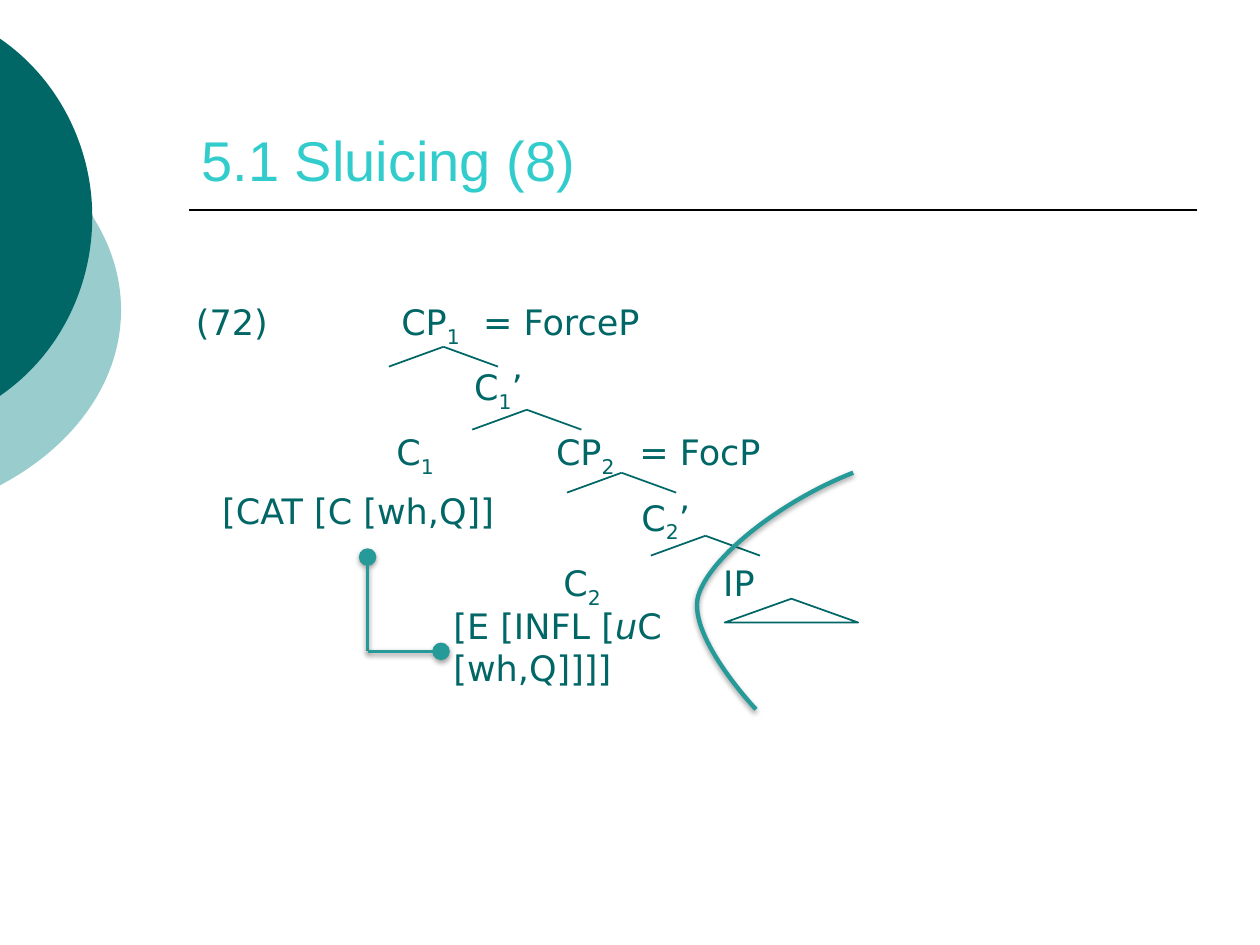
from pptx import Presentation
from pptx.dml.color import RGBColor
from pptx.enum.shapes import MSO_CONNECTOR as Connector, MSO_SHAPE as Preset
from pptx.enum.text import MSO_ANCHOR as Anchor, MSO_AUTO_SIZE as AutoSize, PP_ALIGN as Align
from pptx.oxml.ns import qn
from pptx.util import Cm, Pt
from lxml.etree import SubElement

DARK_TEAL = RGBColor(0x00, 0x66, 0x66)
PALE_TEAL = RGBColor(0x99, 0xCC, 0xCC)
MARK_TEAL = RGBColor(0x26, 0x99, 0x99)
TITLE_TEAL = RGBColor(0x33, 0xCC, 0xCC)
BLACK = RGBColor(0x00, 0x00, 0x00)

SUB, ITALIC = "sub", "italic"

# Each tree row holds its nodes: left edge in cm, text, subscript, text after it.
TREE_ROWS = [
    [(3.7, "(72)", "", ""), (7.84, "CP", "1", ""), (9.49, "= ForceP", "", "")],
    [(9.31, "C", "1", "’")],
    [(7.74, "C", "1", ""), (10.96, "CP", "2", ""), (12.64, "= FocP", "", "")],
    [(12.68, "C", "2", "’")],
    [(11.11, "C", "2", ""), (14.33, "IP", "", "")],
]
ROW_TOP, ROW_PITCH = 5.93, 1.315
NODE_WIDTH, NODE_HEIGHT = 4, 1.11

BRANCH_X = [8.94, 10.62, 12.53, 14.22]
BRANCH_TOP, BRANCH_PITCH = 6.99, 1.27
BRANCH_HALF, BRANCH_DROP = 1.1, 0.4


class SlideWriter:
    def __init__(self, page, font="DejaVu Sans", size=20, color=DARK_TEAL):
        self.page, self.font, self.size, self.color = page, font, size, color

    def title(self, text, *place):
        box = self.page.shapes.title
        box.left, box.top, box.width, box.height = map(Cm, place)
        box.text_frame.vertical_anchor = Anchor.BOTTOM
        box.text_frame.auto_size = AutoSize.NONE
        para = box.text_frame.paragraphs[0]
        para.alignment = Align.LEFT
        span = para.add_run()
        span.text = text
        span.font.name, span.font.size = "Arial", Pt(32)
        span.font.color.rgb = TITLE_TEAL

    def label(self, spans, *place):
        """Add a text box whose spans are pairs of text and style."""
        box = self.page.shapes.add_textbox(*map(Cm, place))
        box.text_frame.word_wrap = True
        para = box.text_frame.paragraphs[0]
        for text, style in spans:
            span = para.add_run()
            span.text = text
            span.font.name = self.font
            span.font.size = Pt(self.size)
            span.font.color.rgb = self.color
            if style == ITALIC:
                span.font.italic = True
            elif style == SUB:
                span._r.get_or_add_rPr().set("baseline", "-25000")

    def node(self, left, top, text, index, after):
        spans = [(text, None), (index, SUB), (after, None)]
        self.label([span for span in spans if span[0]],
                   left, top, NODE_WIDTH, NODE_HEIGHT)

    def effects(self, item, shadow):
        """Replace the theme shadow with a soft one, or with none."""
        effects = SubElement(item._element.spPr, qn("a:effectLst"))
        if shadow:
            outer = SubElement(effects, qn("a:outerShdw"), blurRad=str(Pt(3.1)),
                               dist=str(Pt(1.6)), dir="5400000", rotWithShape="0")
            tint = SubElement(outer, qn("a:srgbClr"), val=str(BLACK))
            SubElement(tint, qn("a:alpha"), val="38000")

    def line(self, start, end, color=DARK_TEAL, width=1, oval=None, shadow=False):
        """Draw a line; oval may be headEnd or tailEnd."""
        line = self.page.shapes.add_connector(Connector.STRAIGHT, *map(Cm, start + end))
        line.line.color.rgb = color
        line.line.width = Pt(width)
        if oval:
            SubElement(line.line._get_or_add_ln(), qn("a:" + oval),
                       type="oval", w="lg", len="lg")
        self.effects(line, shadow)

    def branch(self, x, y):
        for side in (-1, 1):
            self.line((x, y), (x + side * BRANCH_HALF, y + BRANCH_DROP))

    def triangle(self, *place):
        shape = self.page.shapes.add_shape(Preset.ISOSCELES_TRIANGLE, *map(Cm, place))
        shape.shadow.inherit = False
        shape.fill.background()
        shape.line.color.rgb = DARK_TEAL
        shape.line.width = Pt(1)

    def curve(self, frame, start, segments, fill=None):
        """Draw cubic curves in a frame: a filled area or an open shadowed stroke."""
        left, top, width, height = map(Cm, frame)
        builder = self.page.shapes.build_freeform(left, top)
        builder.add_line_segments([(left + width, top + height)], close=False)
        shape = builder.convert_to_shape()
        outline = shape._element.spPr.find(".//" + qn("a:path"))
        for command in list(outline):
            outline.remove(command)
        commands = [("moveTo", [start])] + [("cubicBezTo", points) for points in segments]
        for name, points in commands:
            command = SubElement(outline, qn("a:" + name))
            for x, y in points:
                SubElement(command, qn("a:pt"), x=str(Cm(x) - left), y=str(Cm(y) - top))
        if fill is not None:
            SubElement(outline, qn("a:close"))
            shape.fill.solid()
            shape.fill.fore_color.rgb = fill
            shape.line.fill.background()
        else:
            shape.fill.background()
            shape.line.color.rgb = MARK_TEAL
            shape.line.width = Pt(2.5)
        self.effects(shape, fill is None)


def main():
    deck = Presentation()
    deck.slide_width, deck.slide_height = Cm(25.4), Cm(19.05)
    writer = SlideWriter(deck.slides.add_slide(deck.slide_layouts[5]))

    writer.curve((-8.99, 1.91, 11.43, 8.69), (-0.03, 2.69),
                 [((1.52, 3.51), (2.44, 4.83), (2.44, 6.25)),
                  ((2.44, 7.67), (1.52, 8.99), (-0.03, 9.8))], PALE_TEAL)
    writer.curve((-6.73, 0, 8.59, 8.76), (-0.03, 0.76),
                 [((1.17, 1.57), (1.86, 2.95), (1.86, 4.37)),
                  ((1.86, 5.82), (1.17, 7.19), (-0.03, 8))], DARK_TEAL)
    writer.line((3.81, 4.23), (24.13, 4.23), BLACK)
    writer.title("5.1 Sluicing (8)", 3.81, 0.83, 20.9, 3.18)

    for level, nodes in enumerate(TREE_ROWS):
        for left, *texts in nodes:
            writer.node(left, ROW_TOP + level * ROW_PITCH, *texts)
    writer.triangle(14.61, 12.07, 2.69, 0.48)
    for level, x in enumerate(BRANCH_X):
        writer.branch(x, BRANCH_TOP + level * BRANCH_PITCH)

    writer.curve((13.77, 9.53, 3.45, 4.78), (17.2, 9.53),
                 [((15.8, 10.08), (14.4, 11.15), (14.1, 11.94)),
                  ((13.77, 12.75), (15.24, 14.3), (15.24, 14.3))])
    corner = (7.41, 13.13)
    writer.line((7.41, 11.23), corner, MARK_TEAL, 2, "headEnd", True)
    writer.line(corner, (8.89, 13.13), MARK_TEAL, 2, "tailEnd", True)
    writer.label([("[E [INFL [", None), ("u", ITALIC), ("C [wh,Q]]]]", None)],
                 8.89, 12.07, 5.08, 1.96)
    writer.label([("[CAT [C [wh,Q]]", None)], 4.23, 9.74, 6.55, 1.11)
    deck.save("out.pptx")


if __name__ == "__main__":
    main()
